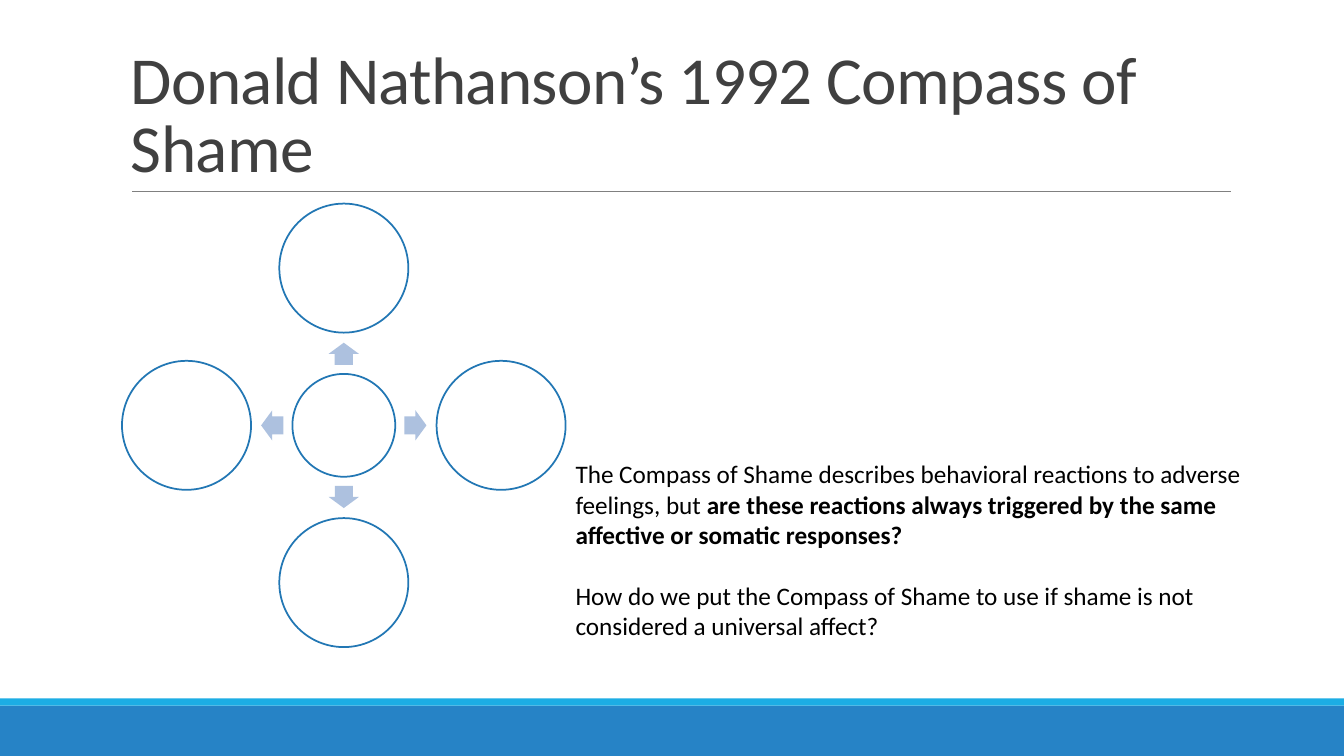
"""Build the Compass of Shame slide."""
import math

import pptx
import pptx.util
import pptx.dml.color
import pptx.enum.shapes
import pptx.enum.text
import pptx.oxml

Inches, Pt = pptx.util.Inches, pptx.util.Pt
SHAPE = pptx.enum.shapes.MSO_SHAPE
ANCHOR = pptx.enum.text.MSO_ANCHOR
COLORS = {
    "footer": "2683C6", "stripe": "1CADE4", "rule": "808080",
    "title": "404040", "body": "000000", "circle": "FFFFFF",
    "outline": "2277B4", "arrow": "ADC1DF",
}
WIDTH, HEIGHT = 13.33, 7.5

presentation = pptx.Presentation()
presentation.slide_width = Inches(WIDTH)
presentation.slide_height = Inches(HEIGHT)
slide = presentation.slides.add_slide(presentation.slide_layouts[6])


def add_filled(kind, center_x, center_y, width, height, fill, outline=None):
    shape = slide.shapes.add_shape(
        kind, Inches(center_x - width / 2), Inches(center_y - height / 2),
        Inches(width), Inches(height))
    shape.shadow.inherit = False
    shape.fill.solid()
    shape.fill.fore_color.rgb = pptx.dml.color.RGBColor.from_string(COLORS[fill])
    if outline:
        shape.line.color.rgb = pptx.dml.color.RGBColor.from_string(COLORS[outline])
        shape.line.width = Pt(1.25)
    else:
        shape.line.fill.background()
    return shape


def add_run(paragraph, text, size, color, bold=False):
    run = paragraph.add_run()
    run.text = text
    run.font.name = "Calibri"
    run.font.size = Pt(size)
    run.font.bold = bold
    run.font.color.rgb = pptx.dml.color.RGBColor.from_string(COLORS[color])
    return run


for fill, top, height in (("footer", 7, 0.5), ("stripe", 6.93, 0.07)):
    add_filled(SHAPE.RECTANGLE, WIDTH / 2, top + height / 2, WIDTH, height, fill)

rule = slide.shapes.add_connector(
    pptx.enum.shapes.MSO_CONNECTOR.STRAIGHT,
    Inches(1.31), Inches(1.9), Inches(12.21), Inches(1.9))
rule.line.color.rgb = pptx.dml.color.RGBColor.from_string(COLORS["rule"])
rule.line.width = Pt(0.5)
rule._element.spPr.append(pptx.oxml.parse_xml(
    '<a:effectLst xmlns:a="http://schemas.openxmlformats.org/drawingml/2006/main"/>'))

title_box = slide.shapes.add_textbox(Inches(1.2), Inches(0.31), Inches(11), Inches(1.59))
title_box.text_frame.word_wrap = True
title_box.text_frame.vertical_anchor = ANCHOR.BOTTOM
title = title_box.text_frame.paragraphs[0]
title.line_spacing = 0.85
title_run = add_run(title, "Donald Nathanson’s 1992 Compass of Shame", 48, "title")
title_run.font._element.set("spc", "-50")

HUB_X, HUB_Y = 3.41, 4.22
ARROW_REACH, CIRCLE_REACH = 0.71, 1.56
add_filled(SHAPE.OVAL, HUB_X, HUB_Y, 1.02, 1.02, "circle", "outline")
for angle in (270, 0, 90, 180):
    across, down = math.cos(math.radians(angle)), math.sin(math.radians(angle))
    arrow = add_filled(
        SHAPE.RIGHT_ARROW, HUB_X + ARROW_REACH * across, HUB_Y + ARROW_REACH * down,
        0.22, 0.3, "arrow")
    arrow.adjustments[0] = 0.6
    arrow.adjustments[1] = 0.5
    arrow.rotation = angle
    add_filled(
        SHAPE.OVAL, HUB_X + CIRCLE_REACH * across, HUB_Y + CIRCLE_REACH * down,
        1.28, 1.28, "circle", "outline")

question_box = slide.shapes.add_textbox(Inches(5.61), Inches(4.5), Inches(6.84), Inches(1.92))
question_box.text_frame.word_wrap = True
reactions = question_box.text_frame.paragraphs[0]
reactions.space_after = Pt(22)
add_run(reactions, "The Compass of Shame describes behavioral reactions to adverse feelings, but ",
        18, "body")
add_run(reactions, "are these reactions always triggered by the same affective or somatic responses?",
        18, "body", bold=True)
usage = question_box.text_frame.add_paragraph()
add_run(usage, "How do we put the Compass of Shame to use if shame is not considered a universal affect?",
        18, "body")

presentation.save("out.pptx")
